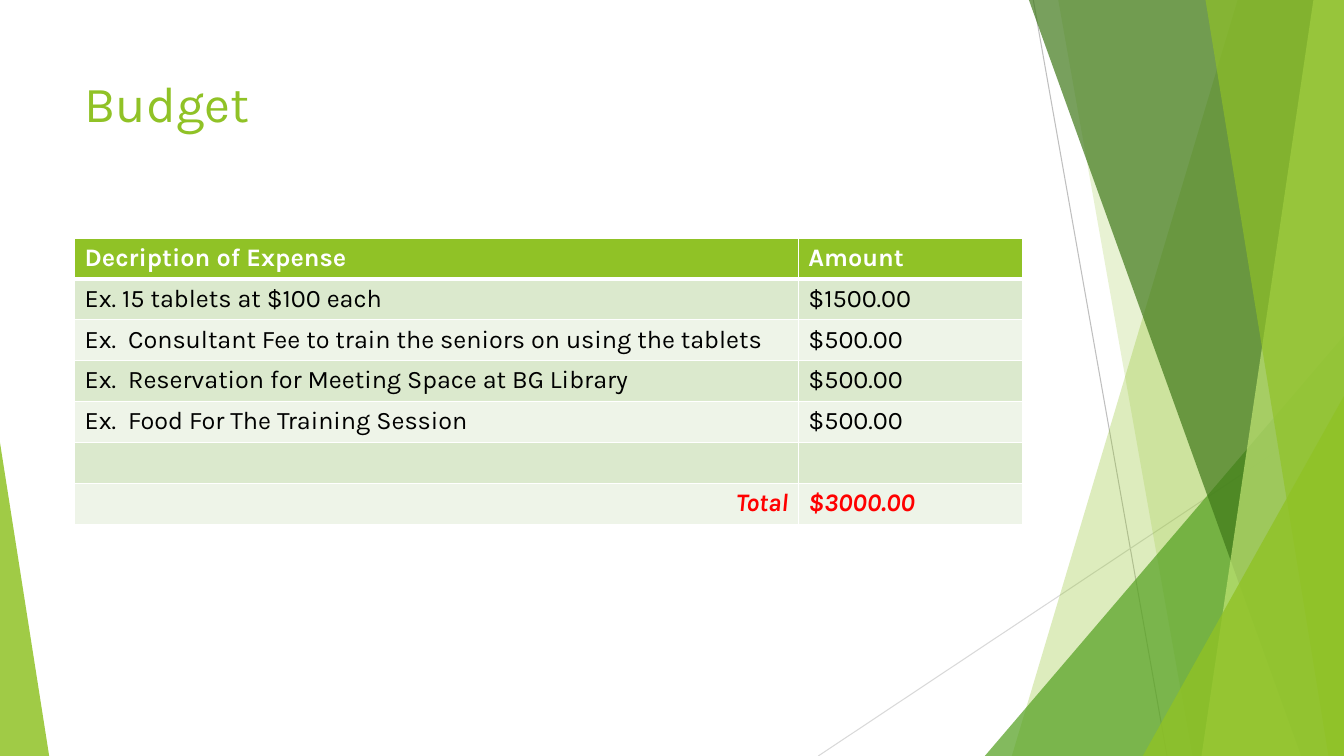
from dataclasses import dataclass

from lxml import etree
from pptx import Presentation
from pptx.dml.color import RGBColor
from pptx.enum.shapes import MSO_CONNECTOR, MSO_SHAPE
from pptx.enum.text import MSO_ANCHOR, PP_ALIGN
from pptx.oxml.ns import qn
from pptx.util import Cm, Pt

STRAIGHT = MSO_CONNECTOR.STRAIGHT
TRIANGLE = MSO_SHAPE.ISOSCELES_TRIANGLE
TOP = MSO_ANCHOR.TOP
LEFT, RIGHT = PP_ALIGN.LEFT, PP_ALIGN.RIGHT

WIDTH, HEIGHT = 33.87, 19.05
FONT = "Karla"
GREEN, WHITE, BLACK, RED = "90C226", "FFFFFF", "000000", "FF0000"
BANDS = ("DBE9CD", "EEF4E8")
TITLE_ONLY = 5


@dataclass
class Line:
    start: tuple[float, float]
    end: tuple[float, float]
    color: str


@dataclass
class Panel:
    """A full-height panel with a slanted left side, reaching the right edge."""
    top_x: float
    bottom_x: float
    color: str
    opacity: int


@dataclass
class Wedge:
    """A right triangle standing on the bottom edge."""
    left: float
    top: float
    width: float
    apex: float
    color: str
    opacity: int


LINES = [
    Line((26.04, 0), (29.41, HEIGHT), "BFBFBF"),
    Line((WIDTH, 10.24), (20.62, HEIGHT), "D9D9D9"),
]
# Back to front
FACETS = [
    Panel(31.19, 25.5, GREEN, 30),
    Panel(26.67, 30.05, GREEN, 20),
    Wedge(24.82, 8.46, 9.05, 1, "54A021", 72),
    Panel(25.93, 32.79, "3F7819", 70),
    Panel(33.1, 30.28, "C0E474", 70),
    Panel(30.38, 33.48, GREEN, 65),
    Wedge(28.8, 9.98, 5.07, 1, GREEN, 80),
    Wedge(0, 11.15, 1.24, 0, GREEN, 85),
]
COLUMN_WIDTHS = (18.24, 5.64)
ROW_HEIGHT = 1.03
EXPENSES = [
    ("Decription of Expense", "Amount"),
    ("Ex. 15 tablets at $100 each", "$1500.00"),
    ("Ex.  Consultant Fee to train the seniors on using the tablets", "$500.00"),
    ("Ex.  Reservation for Meeting Space at BG Library", "$500.00"),
    ("Ex.  Food For The Training Session", "$500.00"),
    ("", ""),
    ("Total", "$3000.00"),
]


def rgb(color: str) -> RGBColor:
    return RGBColor.from_string(color)


def write(frame, text: str, *, size: float = 18, color: str = BLACK,
          bold: bool = False, italic: bool = False, align=LEFT) -> None:
    paragraph = frame.paragraphs[0]
    paragraph.alignment = align
    paragraph.font.size = Pt(size)
    if not text:
        return
    run = paragraph.add_run()
    run.text = text
    font = run.font
    font.name, font.size = FONT, Pt(size)
    font.bold, font.italic = bold, italic
    font.color.rgb = rgb(color)


def draw_line(slide, line: Line) -> None:
    x1, y1, x2, y2 = (Cm(value) for value in line.start + line.end)
    connector = slide.shapes.add_connector(STRAIGHT, x1, y1, x2, y2)
    connector.line.color.rgb = rgb(line.color)
    connector.line.width = Pt(0.75)
    properties = connector._element.find(qn("p:spPr"))
    etree.SubElement(properties, qn("a:effectLst"))


def draw_facet(slide, facet: Panel | Wedge) -> None:
    if isinstance(facet, Panel):
        builder = slide.shapes.build_freeform(Cm(facet.top_x), 0)
        corners = [(WIDTH, 0), (WIDTH, HEIGHT), (facet.bottom_x, HEIGHT)]
        builder.add_line_segments([(Cm(x), Cm(y)) for x, y in corners], close=True)
        shape = builder.convert_to_shape()
    else:
        shape = slide.shapes.add_shape(
            TRIANGLE, Cm(facet.left), Cm(facet.top),
            Cm(facet.width), Cm(HEIGHT - facet.top))
        shape.adjustments[0] = facet.apex
    shape.shadow.inherit = False
    shape.line.fill.background()
    shape.fill.solid()
    shape.fill.fore_color.rgb = rgb(facet.color)
    color = shape._element.spPr.find(f"{qn('a:solidFill')}/{qn('a:srgbClr')}")
    etree.SubElement(color, qn("a:alpha"), val=str(facet.opacity * 1000))


def set_border(cell, side: str, width: float) -> None:
    properties = cell._tc.get_or_add_tcPr()
    border = etree.SubElement(properties, qn(f"a:ln{side}"), w=str(Pt(width)))
    fill = etree.SubElement(border, qn("a:solidFill"))
    etree.SubElement(fill, qn("a:srgbClr"), val=WHITE)


def format_cell(cell, row: int, fill: str) -> None:
    # Borders come before the fill in the cell properties
    widths = {"L": 1, "R": 1, "T": 3 if row == 1 else 1, "B": 3 if row == 0 else 1}
    for side, width in widths.items():
        set_border(cell, side, width)
    cell.fill.solid()
    cell.fill.fore_color.rgb = rgb(fill)


def draw_budget_table(slide) -> None:
    total_row = len(EXPENSES) - 1
    table = slide.shapes.add_table(
        len(EXPENSES), len(COLUMN_WIDTHS), Cm(1.88), Cm(6),
        Cm(sum(COLUMN_WIDTHS)), Cm(ROW_HEIGHT * len(EXPENSES))).table
    for column, width in zip(table.columns, COLUMN_WIDTHS):
        column.width = Cm(width)
    for row, texts in enumerate(EXPENSES):
        table.rows[row].height = Cm(ROW_HEIGHT)
        is_header, is_total = row == 0, row == total_row
        fill = GREEN if is_header else BANDS[(row - 1) % 2]
        color = WHITE if is_header else RED if is_total else BLACK
        for column, text in enumerate(texts):
            cell = table.cell(row, column)
            format_cell(cell, row, fill)
            write(cell.text_frame, text, color=color,
                  bold=is_header or is_total, italic=is_total,
                  align=RIGHT if is_total and column == 0 else LEFT)


def main() -> None:
    presentation = Presentation()
    presentation.slide_width, presentation.slide_height = Cm(WIDTH), Cm(HEIGHT)
    slide = presentation.slides.add_slide(presentation.slide_layouts[TITLE_ONLY])

    # Faceted background
    for line in LINES:
        draw_line(slide, line)
    for facet in FACETS:
        draw_facet(slide, facet)

    # Title
    title = slide.shapes.title
    title.left, title.top, title.width, title.height = Cm(1.88), Cm(1.7), Cm(23.88), Cm(3.66)
    title.text_frame.vertical_anchor = TOP
    write(title.text_frame, "Budget", size=36, color=GREEN)

    # Expenses
    draw_budget_table(slide)
    presentation.save("out.pptx")


if __name__ == "__main__":
    main()
